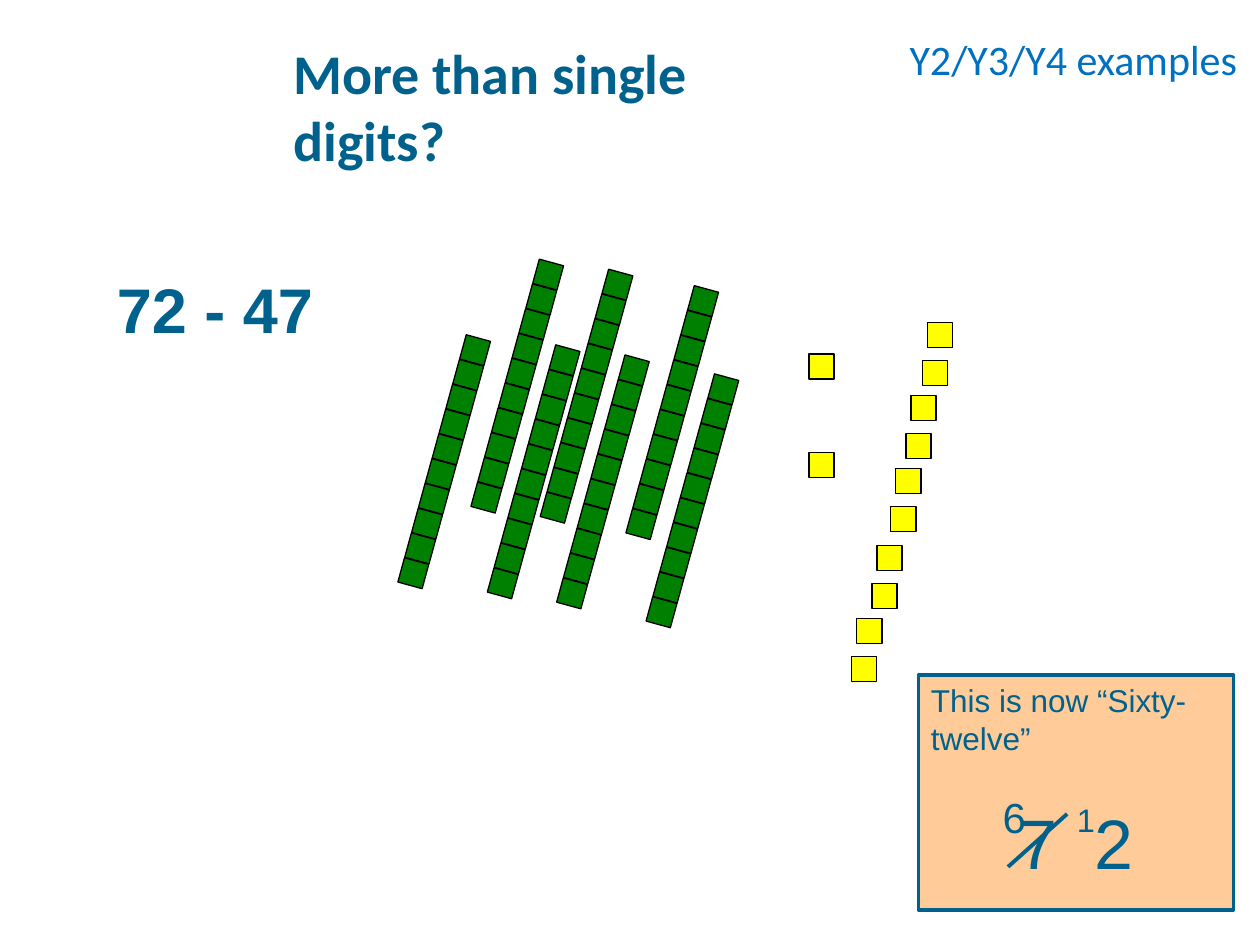
from dataclasses import dataclass

from lxml.etree import SubElement
from pptx import Presentation
from pptx.dml.color import RGBColor
from pptx.enum.shapes import MSO_CONNECTOR, MSO_SHAPE
from pptx.enum.text import MSO_ANCHOR, PP_ALIGN
from pptx.oxml.ns import qn
from pptx.util import Inches, Pt


@dataclass(frozen=True)
class Theme:
    ink: str = "00628C"
    label: str = "0070C0"
    ten: str = "008000"
    one: str = "FFFF00"
    panel: str = "FFCC99"
    white: str = "FFFFFF"
    black: str = "000000"
    head_font: str = "Calibri"
    body_font: str = "Arial"
    title: int = 32
    sum: int = 36
    digit: int = 40
    small: int = 24
    body: int = 18
    thin: float = 0.75
    thick: float = 2.25


T = Theme()
CUBE = 0.2
ROD_ANGLE = 105.3
ROD_RUN, ROD_DROP, ROD_CUBES = -0.49, 1.77, 10
ROD_STARTS = [(3.67, 2.68), (4.25, 2.08), (5.64, 2.99), (4.8, 2.16),
              (4.38, 2.76), (5.48, 2.29), (4.93, 2.84)]
LOOSE_ONES = [(6.42, 2.81), (6.42, 3.59)]
PAIR_STARTS = [(7.36, 2.56), (7.23, 3.14), (7.11, 3.72), (6.96, 4.33), (6.8, 4.91)]
PAIR_STEP = (-0.04, 0.3)


def rgb(color):
    return RGBColor.from_string(color)


def style(r, size, font, color, bold=False):
    r.font.size = Pt(size)
    r.font.name = font
    r.font.bold = bold
    r.font.color.rgb = rgb(color)


def add_rect(shapes, box, fill, line=None, weight=T.thin):
    s = shapes.add_shape(MSO_SHAPE.RECTANGLE, *map(Inches, box))
    s.shadow.inherit = False
    s.fill.solid()
    s.fill.fore_color.rgb = rgb(fill)
    if line:
        s.line.color.rgb = rgb(line)
        s.line.width = Pt(weight)
    else:
        s.line.fill.background()
    return s


def add_text(shapes, box, text, size, font, color, bold=False):
    s = shapes.add_textbox(*map(Inches, box))
    tf = s.text_frame
    tf.word_wrap = True
    tf.text = text
    style(tf.paragraphs[0].runs[0], size, font, color, bold)


def add_cube(shapes, x, y, fill):
    return add_rect(shapes, (x, y, CUBE, CUBE), fill, T.black)


def add_rod(shapes, x, y):
    rod = shapes.add_group_shape()
    for i in range(ROD_CUBES):
        t = i / (ROD_CUBES - 1)
        s = add_cube(rod.shapes, x + t * ROD_RUN, y + t * ROD_DROP, T.ten)
        s.rotation = ROD_ANGLE


def add_pair(shapes, x, y):
    pair = shapes.add_group_shape()
    dx, dy = PAIR_STEP
    add_cube(pair.shapes, x + dx, y + dy, T.one)
    add_cube(pair.shapes, x, y, T.one)


def add_title(shapes, box):
    tf = add_rect(shapes, box, T.white).text_frame
    tf.word_wrap = True
    tf.vertical_anchor = MSO_ANCHOR.MIDDLE
    tf.text = "More than single digits?"
    p = tf.paragraphs[0]
    p.alignment = PP_ALIGN.LEFT
    style(p.runs[0], T.title, T.head_font, T.ink, True)


def add_exchange(shapes, box):
    x, y, w, h = box
    panel = shapes.add_group_shape().shapes
    tf = add_rect(panel, box, T.panel, T.ink, T.thick).text_frame
    tf.word_wrap = True
    tf.vertical_anchor = MSO_ANCHOR.TOP
    tf.text = "This is now “Sixty-twelve”"
    p = tf.paragraphs[0]
    p.alignment = PP_ALIGN.LEFT
    style(p.runs[0], T.body, T.body_font, T.ink)
    p = tf.add_paragraph()
    p.alignment = PP_ALIGN.CENTER
    p.space_before = Pt(24)
    for text, size, raised in [("7 ", T.digit, 0), ("1", T.title, 66000), ("2", T.digit, 0)]:
        r = p.add_run()
        r.text = text
        style(r, size, T.body_font, T.ink)
        if raised:
            r.font._element.set("baseline", str(raised))

    ends = (x + 1.18, y + 1.1, x + 0.71, y + 1.52)
    strike = panel.add_connector(MSO_CONNECTOR.STRAIGHT, *map(Inches, ends))
    strike.line.color.rgb = rgb(T.ink)
    strike.line.width = Pt(T.thick)
    SubElement(strike._element.spPr, qn("a:effectLst"))
    add_text(panel, (x + 0.57, y + 0.87, 0.41, 0.45), "6", T.small, T.body_font, T.ink)


def main():
    prs = Presentation()
    prs.slide_width, prs.slide_height = Inches(10), Inches(7.5)
    shapes = prs.slides.add_slide(prs.slide_layouts[6]).shapes

    for x, y in ROD_STARTS:
        add_rod(shapes, x, y)
    for x, y in LOOSE_ONES:
        add_cube(shapes, x, y, T.one)
    add_text(shapes, (0.83, 2.1, 2.2, 0.7), "72 - 47", T.sum, T.body_font, T.ink, True)
    add_title(shapes, (2.23, 0.21, 4.63, 1.25))
    for x, y in PAIR_STARTS:
        add_pair(shapes, x, y)
    add_exchange(shapes, (7.29, 5.36, 2.5, 1.86))
    add_text(shapes, (7.12, 0.22, 2.88, 0.5), "Y2/Y3/Y4 examples", T.small, T.head_font, T.label)
    prs.save("out.pptx")


if __name__ == "__main__":
    main()
